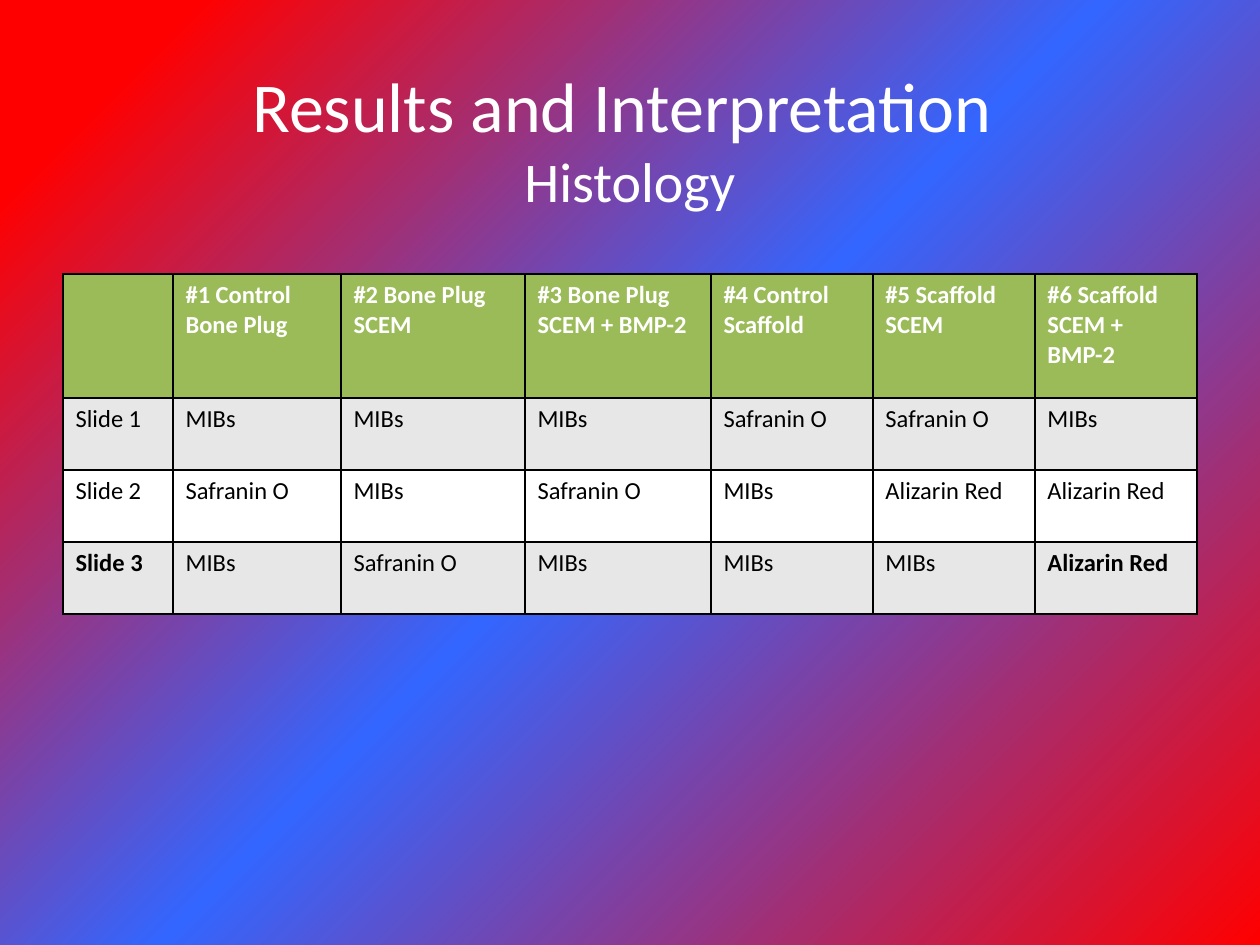
from lxml import etree
from pptx import Presentation
from pptx.dml.color import RGBColor
from pptx.enum.text import MSO_ANCHOR, PP_ALIGN
from pptx.oxml import parse_xml
from pptx.oxml.ns import nsdecls, qn
from pptx.util import Pt

PX = 914400 / 126
MIDDLE = MSO_ANCHOR.MIDDLE
CENTER = PP_ALIGN.CENTER

FONT = "Calibri"
WHITE = RGBColor(0xFF, 0xFF, 0xFF)
BLACK = RGBColor(0x00, 0x00, 0x00)
RED = RGBColor(0xFF, 0x00, 0x00)
BLUE = RGBColor(0x33, 0x66, 0xFF)
GREEN = RGBColor(0x9B, 0xBB, 0x59)
GRAY = RGBColor(0xE7, 0xE7, 0xE7)

STOPS = [(0, RED), (50, BLUE), (91, RED)]
COLS = [110, 168, 184, 186, 162, 162, 162]
ROWS = [124, 72, 72, 72]
FILLS = [GREEN, GRAY, WHITE, GRAY]
STAINS = [
    ["", "#1 Control Bone Plug", "#2 Bone Plug SCEM",
     "#3 Bone Plug SCEM + BMP-2", "#4 Control Scaffold",
     "#5 Scaffold SCEM", "#6 Scaffold SCEM + BMP-2"],
    ["Slide 1", "MIBs", "MIBs", "MIBs", "Safranin O", "Safranin O", "MIBs"],
    ["Slide 2", "Safranin O", "MIBs", "Safranin O", "MIBs",
     "Alizarin Red", "Alizarin Red"],
    ["Slide 3", "MIBs", "Safranin O", "MIBs", "MIBs", "MIBs",
     "Alizarin Red"],
]
BOLD = {(3, 0), (3, 6)}


def px(n):
    return round(n * PX)


def style(font, size, color, bold=False):
    font.name = FONT
    font.size = Pt(size)
    font.color.rgb = color
    font.bold = bold


def paint_back(slide):
    """Fill the background with a gradient that starts at the lower right."""
    fill = slide.background.fill
    fill.gradient()
    grad = slide.background._cSld.find(".//" + qn("a:gradFill"))
    stops = "".join(
        f'<a:gs pos="{pos * 1000}"><a:srgbClr val="{color}"/></a:gs>'
        for pos, color in STOPS)
    new = parse_xml(
        f'<a:gradFill {nsdecls("a")} rotWithShape="1">'
        f'<a:gsLst>{stops}</a:gsLst><a:path path="circle">'
        '<a:fillToRect l="100000" t="100000"/></a:path></a:gradFill>')
    grad.getparent().replace(grad, new)


def add_title(slide):
    box = slide.shapes.add_textbox(px(63), px(38), px(1134), px(200))
    frame = box.text_frame
    frame.word_wrap = True
    frame.vertical_anchor = MIDDLE
    frame.text = "Results and Interpretation \vHistology"
    para = frame.paragraphs[0]
    para.alignment = CENTER
    for run, size in zip(para.runs, (40, 32)):
        style(run.font, size, WHITE)


def add_edges(cell):
    props = cell._tc.get_or_add_tcPr()
    for side in ("a:lnL", "a:lnR", "a:lnT", "a:lnB"):
        line = etree.SubElement(props, qn(side), w=str(Pt(1)))
        solid = etree.SubElement(line, qn("a:solidFill"))
        etree.SubElement(solid, qn("a:srgbClr"), val=str(BLACK))


def fill_cell(cell, text, fill, color, bold):
    add_edges(cell)
    cell.fill.solid()
    cell.fill.fore_color.rgb = fill
    cell.text = text
    para = cell.text_frame.paragraphs[0]
    for run in para.runs:
        style(run.font, 14, color, bold)


def add_stains(slide):
    frame = slide.shapes.add_table(
        len(ROWS), len(COLS), px(63), px(274), px(sum(COLS)), px(sum(ROWS)))
    table = frame.table
    for col, width in zip(table.columns, COLS):
        col.width = px(width)
    for row, height in zip(table.rows, ROWS):
        row.height = px(height)
    for r, texts in enumerate(STAINS):
        head = r == 0
        for c, text in enumerate(texts):
            fill_cell(table.cell(r, c), text, FILLS[r],
                      WHITE if head else BLACK, head or (r, c) in BOLD)


def main():
    prs = Presentation()
    prs.slide_width = px(1260)
    prs.slide_height = px(945)
    slide = prs.slides.add_slide(prs.slide_layouts[6])
    paint_back(slide)
    add_title(slide)
    add_stains(slide)
    prs.save("out.pptx")


if __name__ == "__main__":
    main()
